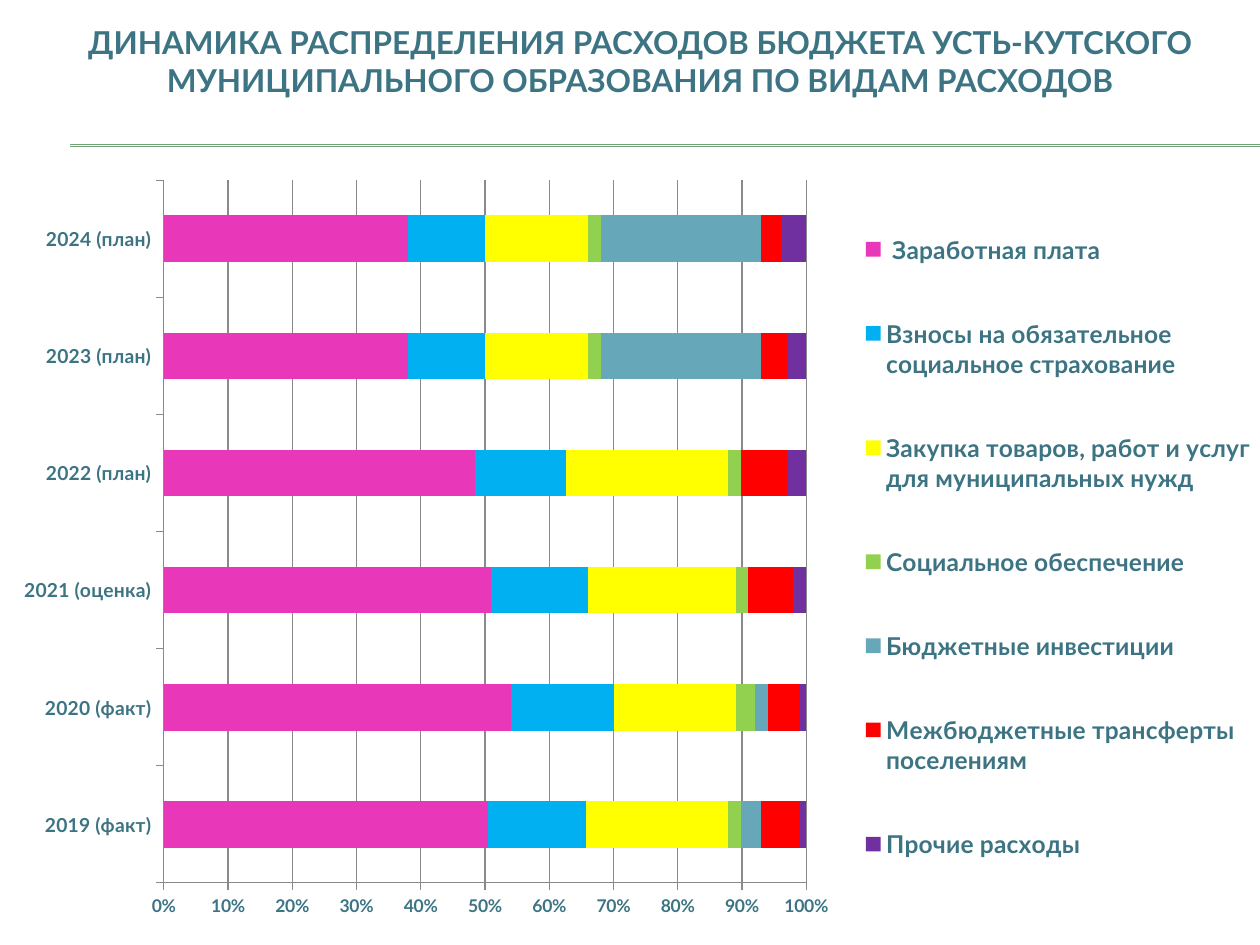
from lxml import etree
from pptx import Presentation
from pptx.chart import data as cd
from pptx.dml.color import RGBColor
from pptx.enum import chart as ch, shapes, text
from pptx.oxml import parse_xml
from pptx.oxml.ns import nsdecls, qn
from pptx.util import Cm, Pt

FONT, TEAL, GREEN, GREY = "Lato", "3C7483", "72A376", "8A8A8A"
TITLE = ("ДИНАМИКА РАСПРЕДЕЛЕНИЯ РАСХОДОВ БЮДЖЕТА УСТЬ-КУТСКОГО "
         "МУНИЦИПАЛЬНОГО ОБРАЗОВАНИЯ ПО ВИДАМ РАСХОДОВ")
YEARS = ["2019 (факт)", "2020 (факт)", "2021 (оценка)",
         "2022 (план)", "2023 (план)", "2024 (план)"]
SERIES = [
    (" Заработная плата ", "E937BA", (50, 54, 51, 48, 38, 38)),
    ("Взносы на обязательное социальное страхование", "00B0F0", (15, 16, 15, 14, 12, 12)),
    ("Закупка товаров, работ и услуг для муниципальных нужд", "FFFF00", (22, 19, 23, 25, 16, 16)),
    ("Социальное обеспечение", "92D050", (2, 3, 2, 2, 2, 2)),
    ("Бюджетные инвестиции ", "66A7B9", (3, 2, 0, 0, 25, 25)),
    ("Межбюджетные трансферты поселениям", "FF0000", (6, 5, 7, 7, 4, 3)),
    ("Прочие расходы", "7030A0", (1, 1, 2, 3, 3, 4)),
]
RULES = [2.92, 2.95]
PLOT_BOX = (0.13, 0.02, 0.51, 0.92)
LEGEND_BOX = (0.68, 0.02, 0.32, 0.96)


def rgb(value):
    return RGBColor.from_string(value)


def style_font(font, size):
    font.name, font.size, font.bold = FONT, Pt(size), True
    font.color.rgb = rgb(TEAL)


def style_line(line, color, width):
    line.color.rgb = rgb(color)
    line.width = Pt(width)


def layout(box, inner=False):
    target = '<c:layoutTarget val="inner"/>' if inner else ""
    modes = "".join(f'<c:{k}Mode val="edge"/>' for k in "xy")
    sizes = "".join(f'<c:{k} val="{v}"/>' for k, v in zip("xywh", box))
    return parse_xml(f'<c:layout {nsdecls("c")}><c:manualLayout>{target}{modes}{sizes}'
                     '</c:manualLayout></c:layout>')


def add_rule(s, y):
    line = s.shapes.add_connector(shapes.MSO_CONNECTOR.STRAIGHT,
                                  Cm(1.42), Cm(y), Cm(25.4), Cm(y))
    style_line(line.line, GREEN, 0.75)
    etree.SubElement(line._element.spPr, qn("a:effectLst"))


def add_title(s):
    sp = s.shapes.title
    sp.left, sp.top, sp.width, sp.height = Cm(0.84), Cm(0.13), Cm(24.13), Cm(2.21)
    tf = sp.text_frame
    tf.word_wrap = True
    tf.vertical_anchor = text.MSO_ANCHOR.MIDDLE
    p = tf.paragraphs[0]
    p.alignment = text.PP_ALIGN.CENTER
    r = p.add_run()
    r.text = TITLE
    style_font(r.font, 18)


def add_spending_chart(s):
    data = cd.CategoryChartData()
    data.categories = YEARS
    for name, _, values in SERIES:
        data.add_series(name, values)
    chart = s.shapes.add_chart(ch.XL_CHART_TYPE.BAR_STACKED_100, Cm(0), Cm(3.33),
                               Cm(25.4), Cm(15.39), data).chart
    chart.has_title = False
    chart.font.name, chart.font.size = FONT, Pt(18)

    plot = chart.plots[0]
    plot.gap_width, plot.overlap, plot.vary_by_categories = 150, 100, False
    for series, (_, color, _) in zip(plot.series, SERIES):
        series.format.fill.solid()
        series.format.fill.fore_color.rgb = rgb(color)

    for axis, size in ((chart.category_axis, 11), (chart.value_axis, 10)):
        style_font(axis.tick_labels.font, size)
        style_line(axis.format.line, GREY, 0.75)
        axis.major_tick_mark = ch.XL_TICK_MARK.OUTSIDE
    axis = chart.value_axis
    axis.minimum_scale, axis.maximum_scale, axis.major_unit = 0, 1, 0.1
    axis.tick_labels.number_format = "0%"
    axis.tick_labels.number_format_is_linked = False
    axis.has_major_gridlines = True
    style_line(axis.major_gridlines.format.line, GREY, 0.75)

    chart.has_legend = True
    legend = chart.legend
    legend.position = ch.XL_LEGEND_POSITION.RIGHT
    legend.include_in_layout = False
    style_font(legend.font, 14)

    area = chart._chartSpace.chart.plotArea
    for parent, box, inner in ((area, PLOT_BOX, True), (legend._element, LEGEND_BOX, False)):
        for old in parent.findall(qn("c:layout")):
            parent.remove(old)
        parent.insert(0 if inner else 1, layout(box, inner))


def main():
    prs = Presentation()
    prs.slide_width, prs.slide_height = Cm(25.4), Cm(19.05)
    s = prs.slides.add_slide(prs.slide_layouts[5])
    for y in RULES:
        add_rule(s, y)
    add_title(s)
    add_spending_chart(s)
    prs.save("out.pptx")


if __name__ == "__main__":
    main()
